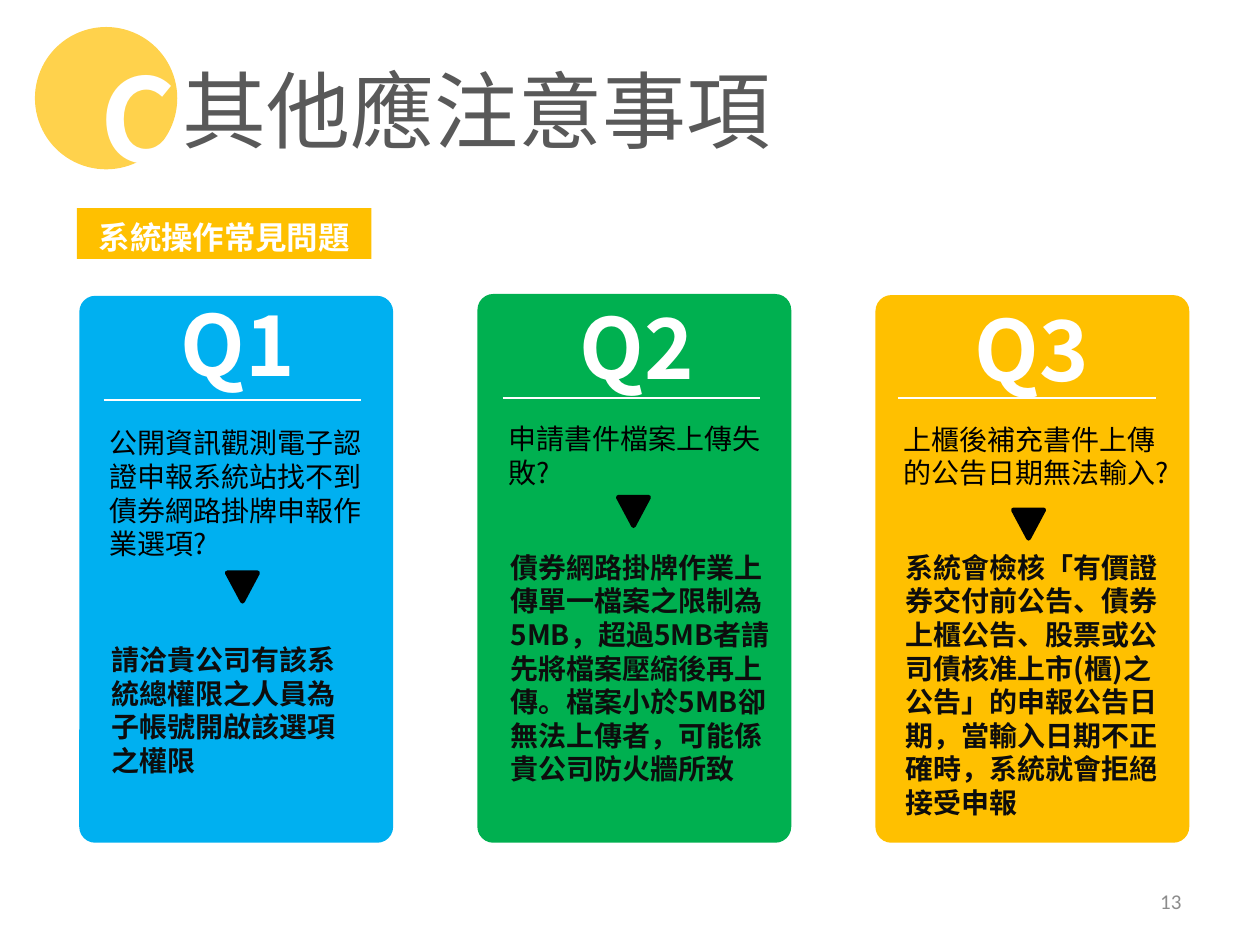
from dataclasses import dataclass

from lxml import etree
from pptx import Presentation
from pptx.dml.color import RGBColor
from pptx.enum.shapes import MSO_CONNECTOR, MSO_SHAPE
from pptx.enum.text import MSO_ANCHOR, PP_ALIGN
from pptx.oxml.ns import qn
from pptx.util import Pt

LEFT, CENTER, RIGHT = PP_ALIGN.LEFT, PP_ALIGN.CENTER, PP_ALIGN.RIGHT
TOP, MIDDLE = MSO_ANCHOR.TOP, MSO_ANCHOR.MIDDLE
RECT, ROUNDED = MSO_SHAPE.RECTANGLE, MSO_SHAPE.ROUNDED_RECTANGLE
OVAL, TRIANGLE = MSO_SHAPE.OVAL, MSO_SHAPE.ISOSCELES_TRIANGLE
STRAIGHT = MSO_CONNECTOR.STRAIGHT

WHITE, BLACK, INK, GOLD = "FFFFFF", "000000", "0D0D0D", "FFC000"
CJK = "Noto Sans CJK SC"
LINE_HEIGHT = 1.2
BASELINE_SHIFT = 0.1


def rgb(value):
    return RGBColor.from_string(value)


@dataclass
class Card:
    title: str
    question: str
    answer: str
    color: str
    top: float
    text_x: float
    title_y: float
    rule_y: float
    question_y: float
    answer_y: float
    answer_w: float
    arrow_x: float
    arrow_y: float


class Deck:
    def __init__(self, slide, font=CJK):
        self.slide = slide
        self.font = font

    def label(self, sp, text, size, color, bold=False, align=LEFT, anchor=TOP, font=None):
        tf = sp.text_frame
        tf.text = text
        tf.word_wrap = True
        tf.vertical_anchor = anchor
        p = tf.paragraphs[0]
        p.alignment = align
        if font is None:
            p.line_spacing = Pt(size * LINE_HEIGHT)
            shift = size * BASELINE_SHIFT * (2 if anchor == MIDDLE else 1)
            tf.margin_top = Pt(3.6 + shift)
        r = p.runs[0]
        r.font.name = font or self.font
        r.font.size = Pt(size)
        r.font.bold = bold
        r.font.color.rgb = rgb(color)
        ea = etree.SubElement(r.font._element, qn("a:ea"))
        ea.set("typeface", font or self.font)

    def text(self, x, y, w, h, text, size, color, **style):
        sp = self.slide.shapes.add_textbox(Pt(x), Pt(y), Pt(w), Pt(h))
        self.label(sp, text, size, color, **style)

    def shape(self, kind, x, y, w, h, fill, line=None, alpha=None):
        sp = self.slide.shapes.add_shape(kind, Pt(x), Pt(y), Pt(w), Pt(h))
        sp.shadow.inherit = False
        sp.fill.solid()
        sp.fill.fore_color.rgb = rgb(fill)
        if line:
            sp.line.color.rgb = rgb(line)
            sp.line.width = Pt(2)
        else:
            sp.line.fill.background()
        if alpha:
            clr = sp._element.spPr.find(".//" + qn("a:srgbClr"))
            etree.SubElement(clr, qn("a:alpha")).set("val", str(alpha * 1000))
        return sp

    def rule(self, x, y, w):
        line = self.slide.shapes.add_connector(STRAIGHT, Pt(x), Pt(y), Pt(x + w), Pt(y))
        line.line.color.rgb = rgb(WHITE)
        line.line.width = Pt(0.75)
        etree.SubElement(line._element.spPr, qn("a:effectLst"))

    def card(self, x, card):
        sp = self.shape(ROUNDED, x, card.top, 134.5, 361.2 - card.top, card.color)
        sp.adjustments[0] = 0.051
        left = card.text_x
        self.text(left + 28.6, card.title_y, 67, 51, card.title, 36, WHITE,
                  bold=True, align=CENTER)
        self.rule(left + 4.6, card.rule_y, 110.5)
        self.text(left, card.question_y, 122.4, 69, card.question, 12, BLACK)
        self.text(left + 1, card.answer_y, card.answer_w, 124, card.answer, 12, INK,
                  bold=True)
        arrow = self.shape(TRIANGLE, card.arrow_x, card.arrow_y, 13, 12.2, BLACK, BLACK)
        arrow.rotation = 180


CARDS = [
    Card("Q1", "公開資訊觀測電子認證申報系統站找不到債券網路掛牌申報作業選項?",
         "請洽貴公司有該系統總權限之人員為子帳號開啟該選項之權限",
         "00B0F0", 126.8, 39.8, 118.1, 171.4, 177.8, 270.7, 121.5, 97.4, 245.5),
    Card("Q2", "申請書件檔案上傳失敗?",
         "債券網路掛牌作業上傳單一檔案之限制為5MB，超過5MB者請先將檔案壓縮後再上傳。"
         "檔案小於5MB卻無法上傳者，可能係貴公司防火牆所致",
         "00B050", 126, 210.8, 119.5, 170.6, 175.9, 231.1, 126.7, 265, 213.1),
    Card("Q3", "上櫃後補充書件上傳的公告日期無法輸入?",
         "系統會檢核「有價證券交付前公告、債券上櫃公告、股票或公司債核准上市(櫃)之公告」"
         "的申報公告日期，當輸入日期不正確時，系統就會拒絕接受申報",
         GOLD, 126.5, 380.2, 120.2, 170.6, 176.2, 231.1, 126.7, 434.3, 218.5),
]


def main():
    prs = Presentation()
    prs.slide_width, prs.slide_height = Pt(540), Pt(405)
    deck = Deck(prs.slides.add_slide(prs.slide_layouts[6]))

    deck.shape(OVAL, 15, 11.6, 61, 61, GOLD, alpha=70)
    deck.text(36, 11.6, 48.2, 67, "C", 49.5, WHITE, bold=True)
    deck.text(71.3, 18, 280, 51, "其他應注意事項", 36, "595959")

    banner = deck.shape(RECT, 33, 89.2, 126.2, 21.8, GOLD)
    deck.label(banner, "系統操作常見問題", 13.5, WHITE, bold=True, align=CENTER, anchor=MIDDLE)

    for i, card in enumerate(CARDS):
        deck.card(34 + 170.6 * i, card)

    deck.text(387.4, 375.4, 126, 21.6, "13", 9, "8C8C8C", align=RIGHT, anchor=MIDDLE,
              font="Calibri")
    prs.save("out.pptx")


if __name__ == "__main__":
    main()
